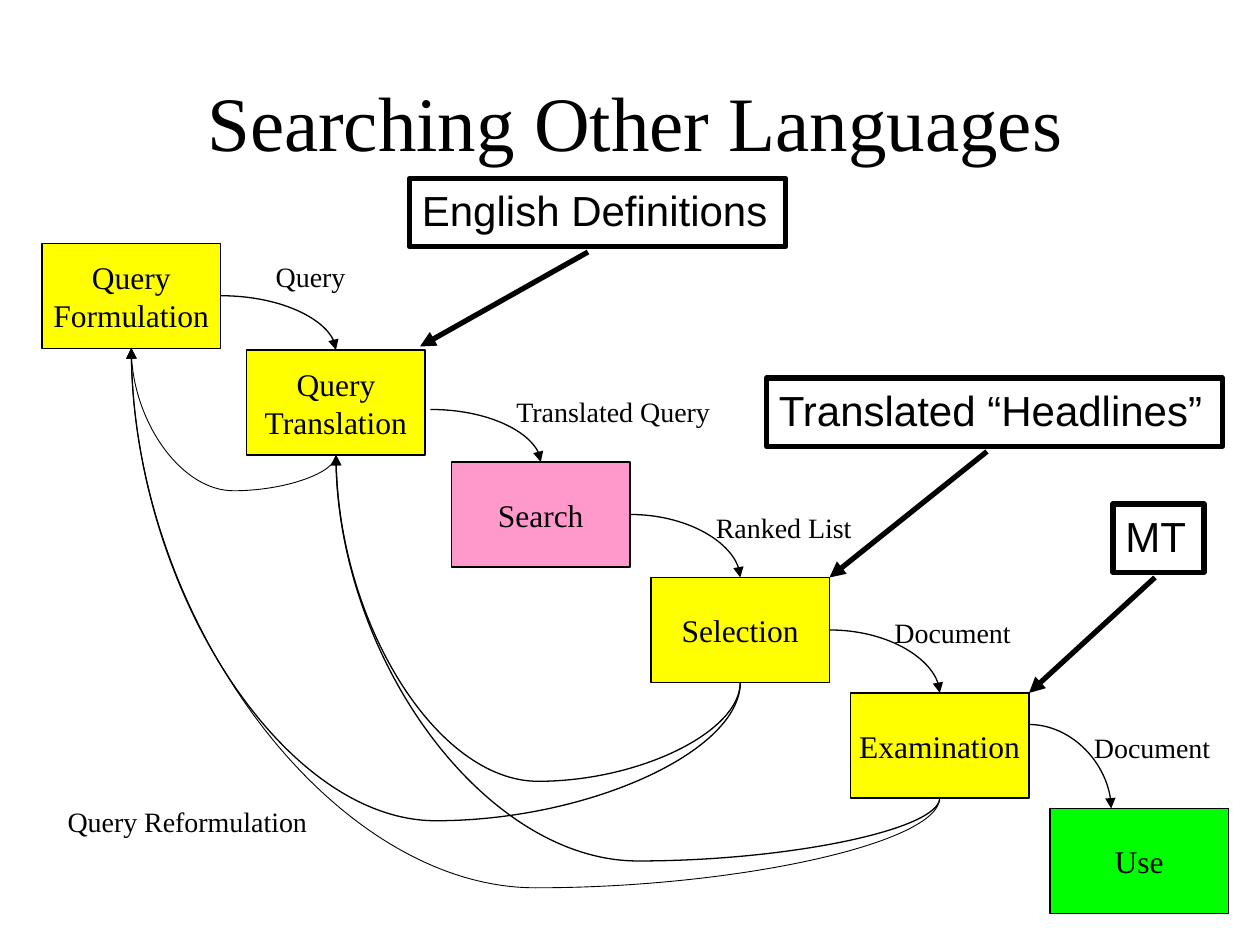
from typing import NamedTuple

from lxml.etree import SubElement
from pptx import Presentation
from pptx.dml.color import RGBColor
from pptx.enum.shapes import MSO_CONNECTOR, MSO_SHAPE
from pptx.enum.text import MSO_ANCHOR, PP_ALIGN
from pptx.oxml.ns import qn
from pptx.util import Pt

BLACK = RGBColor(0, 0, 0)
YELLOW = RGBColor(255, 255, 0)
PINK = RGBColor(255, 153, 204)
GREEN = RGBColor(0, 255, 0)
SERIF = "Times New Roman"
SANS = "Arial"
STEP_W, STEP_H = 102, 60
NOTE_H = 39
LABEL_H = 26.5


class Step(NamedTuple):
    lines: list[str]
    left: float
    top: float
    fill: RGBColor


class Label(NamedTuple):
    text: str
    left: float
    top: float
    width: float


class Note(NamedTuple):
    text: str
    left: float
    top: float
    width: float
    start: tuple[float, float]
    end: tuple[float, float]


class Bend(NamedTuple):
    start: tuple[float, float]
    end: tuple[float, float]


class Loop(NamedTuple):
    start: tuple[float, float]
    end: tuple[float, float]
    low: float
    weight: float


FORM = Step(["Query", "Formulation"], 24, 139, YELLOW)
TRANS = Step(["Query", "Translation"], 141, 200, YELLOW)
SEARCH, SELECT, EXAM, USE = (
    Step([name], 258 + 114 * i, 264 + 66 * i, fill)
    for i, (name, fill) in enumerate(
        [("Search", PINK), ("Selection", YELLOW),
         ("Examination", YELLOW), ("Use", GREEN)]
    )
)
STEPS = [FORM, TRANS, SEARCH, SELECT, EXAM, USE]

LABELS = [
    Label("Query", 150.5, 145, 55),
    Label("Translated Query", 288, 222, 126),
    Label("Ranked List", 402, 288, 92),
    Label("Document", 504, 348, 81.5),
    Label("Document", 618, 414, 81.5),
    Label("Query Reformulation", 31.5, 456, 156),
]

NOTES = [
    Note("MT", 636, 288, 52, (660, 330), (588, 396)),
    Note("Translated “Headlines”", 438, 216, 260.5, (564, 258), (474, 330)),
    Note("English Definitions", 234, 102, 215, (336, 144), (240, 198)),
]


def head(step: Step) -> tuple[float, float]:
    return step.left + STEP_W / 2, step.top


def foot(step: Step) -> tuple[float, float]:
    return step.left + STEP_W / 2, step.top + STEP_H


def side(step: Step) -> tuple[float, float]:
    return step.left + STEP_W, step.top + STEP_H / 2


BENDS = [
    Bend(side(FORM), head(TRANS)),
    Bend((246, 234), head(SEARCH)),
    Bend(side(SEARCH), head(SELECT)),
    Bend(side(SELECT), head(EXAM)),
    Bend((588, 414), (635, 462)),
]

LOOPS = [
    Loop(foot(SELECT), foot(FORM), 469, 0.75),
    Loop(foot(SELECT), foot(TRANS), 446.5, 0.75),
    Loop(foot(EXAM), foot(TRANS), 492, 0.75),
    Loop(foot(TRANS), foot(FORM), 280.5, 0.5),
    Loop(foot(EXAM), foot(FORM), 507.5, 0.5),
]


def write(shape, lines: list[str], size: float, font: str = SERIF,
          align=PP_ALIGN.LEFT, anchor=MSO_ANCHOR.TOP, wrap: bool = False) -> None:
    frame = shape.text_frame
    frame.word_wrap = wrap
    frame.vertical_anchor = anchor
    for i, line in enumerate(lines):
        para = frame.add_paragraph() if i else frame.paragraphs[0]
        para.alignment = align
        run = para.add_run()
        run.text = line
        run.font.size = Pt(size)
        run.font.name = font
        run.font.color.rgb = BLACK


def add_box(slide, left: float, top: float, width: float, height: float,
            weight: float, fill: RGBColor | None = None):
    box = slide.shapes.add_shape(
        MSO_SHAPE.RECTANGLE, Pt(left), Pt(top), Pt(width), Pt(height))
    box.shadow.inherit = False
    box.line.color.rgb = BLACK
    box.line.width = Pt(weight)
    if fill is None:
        box.fill.background()
    else:
        box.fill.solid()
        box.fill.fore_color.rgb = fill
    return box


def add_arrow(slide, kind, start: tuple[float, float],
              end: tuple[float, float], weight: float):
    arrow = slide.shapes.add_connector(
        kind, Pt(start[0]), Pt(start[1]), Pt(end[0]), Pt(end[1]))
    arrow.line.color.rgb = BLACK
    arrow.line.width = Pt(weight)
    SubElement(arrow.line._get_or_add_ln(), qn("a:tailEnd"), type="triangle")
    SubElement(arrow._element.spPr, qn("a:effectLst"))
    return arrow


def add_step(slide, step: Step) -> None:
    box = add_box(slide, step.left, step.top, STEP_W, STEP_H, 0.75, step.fill)
    write(box, step.lines, 18, align=PP_ALIGN.CENTER, anchor=MSO_ANCHOR.MIDDLE)


def add_label(slide, label: Label) -> None:
    box = slide.shapes.add_textbox(
        Pt(label.left), Pt(label.top), Pt(label.width), Pt(LABEL_H))
    write(box, [label.text], 16)


def add_note(slide, note: Note) -> None:
    box = add_box(slide, note.left, note.top, note.width, NOTE_H, 3)
    write(box, [note.text], 24, SANS, wrap=True)
    add_arrow(slide, MSO_CONNECTOR.STRAIGHT, note.start, note.end, 3)


def add_bend(slide, bend: Bend) -> None:
    arrow = add_arrow(slide, MSO_CONNECTOR.CURVE, bend.start, bend.end, 0.75)
    arrow._element.spPr.find(qn("a:prstGeom")).set("prst", "curvedConnector2")


def add_loop(slide, loop: Loop) -> None:
    (x1, y1), (x2, y2) = loop.start, loop.end
    wide, high = x1 - x2, y1 - y2
    left, top = (x1 + x2 - high) / 2, (y1 + y2 - wide) / 2
    arrow = add_arrow(slide, MSO_CONNECTOR.CURVE, (left, top),
                      (left + high, top + wide), loop.weight)
    props = arrow._element.spPr
    frame = props.find(qn("a:xfrm"))
    frame.set("rot", "16200000")
    frame.set("flipV", "1")
    guides = props.find(qn("a:prstGeom")).find(qn("a:avLst"))
    ratio = round((y1 - loop.low) / high * 100000)
    SubElement(guides, qn("a:gd"), name="adj1", fmla=f"val {ratio}")


def main() -> None:
    deck = Presentation()
    deck.slide_width, deck.slide_height = Pt(720), Pt(540)
    slide = deck.slides.add_slide(deck.slide_layouts[6])
    title = slide.shapes.add_textbox(Pt(42), Pt(24), Pt(642), Pt(90))
    write(title, ["Searching Other Languages"], 44, align=PP_ALIGN.CENTER,
          anchor=MSO_ANCHOR.MIDDLE, wrap=True)
    for draw, items in [(add_step, STEPS), (add_bend, BENDS),
                        (add_label, LABELS), (add_loop, LOOPS),
                        (add_note, NOTES)]:
        for item in items:
            draw(slide, item)
    deck.save("out.pptx")


if __name__ == "__main__":
    main()
